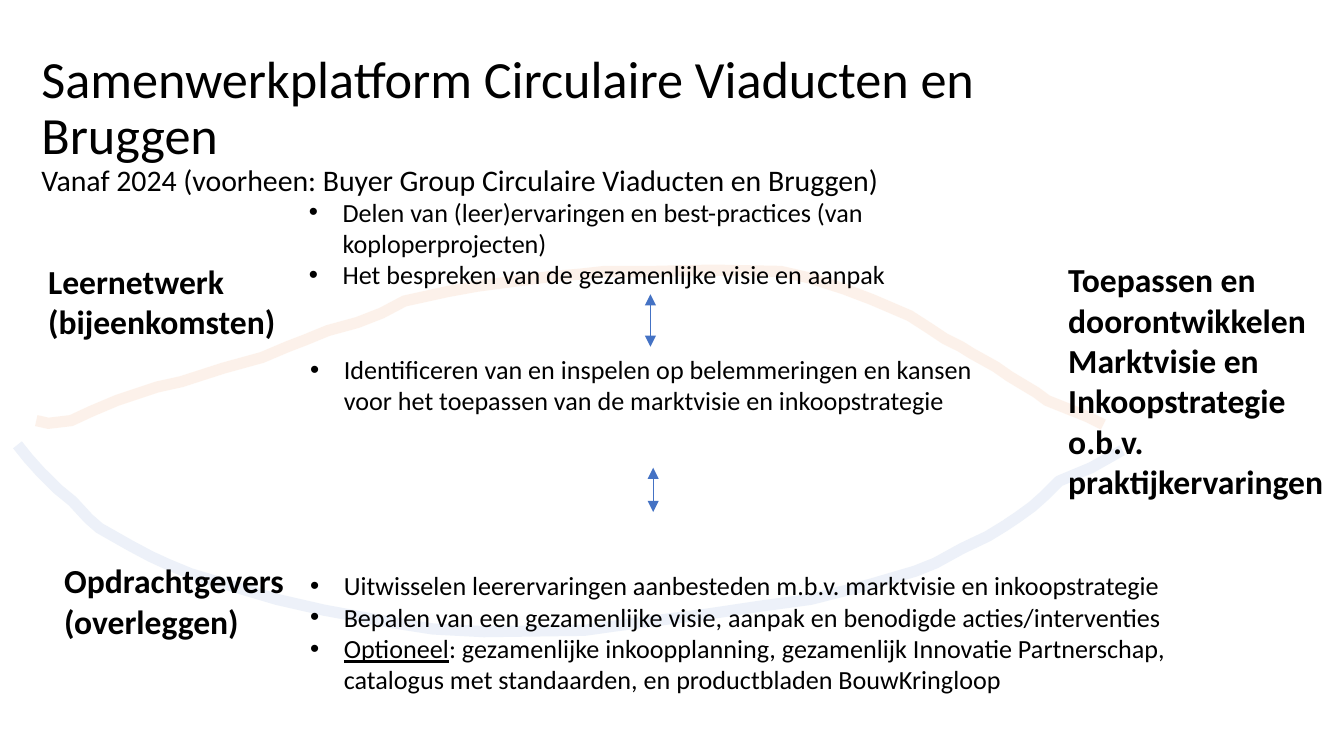
from lxml import etree
from pptx import Presentation
from pptx.dml.color import RGBColor
from pptx.enum.shapes import MSO_CONNECTOR as CONN
from pptx.enum.text import MSO_ANCHOR as ANCHOR, MSO_AUTO_SIZE as AUTO
from pptx.oxml.ns import qn
from pptx.util import Inches, Pt

FONT = "Calibri"
BLACK, BLUE = "000000", "4472C4"

TITLE = [
    ("Samenwerkplatform Circulaire Viaducten en Bruggen", 28),
    ("Vanaf 2024 (voorheen: Buyer Group Circulaire Viaducten en Bruggen)", 16),
]
TITLE_BOX = (0.21, 0.39, 8.5, 1.09)

LABELS = [
    ((0.26, 1.89, 2.26, 0.71), [["Leernetwerk", "(bijeenkomsten)"]]),
    ((7.85, 1.88, 2.14, 1.92),
     [["Toepassen en doorontwikkelen Marktvisie en Inkoopstrategie o.b.v. praktijkervaringen"]]),
    ((0.38, 4.12, 2.26, 0.71), [["Opdrachtgevers"], ["(overleggen)"]]),
]

BULLETS = [
    ((2.2, 1.41, 5.21, 0.98), [
        [("Delen van (leer)ervaringen en best-practices (van koploperprojecten)", False)],
        [("Het bespreken van de gezamenlijke visie en aanpak", False)],
    ]),
    ((2.21, 2.58, 5.2, 0.57), [
        [("Identificeren van en inspelen op belemmeringen en kansen voor het "
          "toepassen van de marktvisie en inkoopstrategie", False)],
    ]),
    ((2.21, 4.19, 7.33, 1.04), [
        [("Uitwisselen leerervaringen aanbesteden m.b.v. marktvisie en inkoopstrategie", False)],
        [("Bepalen van een gezamenlijke visie, aanpak en benodigde acties/interventies", False)],
        [("Optioneel", True),
         (": gezamenlijke inkoopplanning, gezamenlijk Innovatie Partnerschap, "
          "catalogus met standaarden, en productbladen BouwKringloop", False)],
    ]),
]

ARCS = [
    ("FBE5D6", 50, [
        (0.27, 3.13), (0.36, 3.15), (0.53, 3.13), (0.68, 3.06), (0.87, 2.98), (1.02, 2.93),
        (1.17, 2.88), (1.35, 2.84), (1.66, 2.74), (1.95, 2.66), (2.14, 2.58), (2.27, 2.53),
        (2.44, 2.46), (2.66, 2.4), (2.84, 2.33), (3.01, 2.24), (3.33, 2.17), (3.55, 2.13),
        (3.85, 2.09), (4.08, 2.06), (4.32, 2.04), (4.5, 2.02), (4.86, 2.02), (5.3, 2.01),
        (5.81, 2.02), (6.03, 2.07), (6.28, 2.15), (6.49, 2.23), (6.77, 2.35), (6.91, 2.44),
        (7.03, 2.52), (7.15, 2.58), (7.23, 2.63), (7.41, 2.73), (7.51, 2.8), (7.61, 2.86),
        (7.71, 2.92), (7.79, 2.98), (7.94, 3.04), (8.09, 3.1), (8.21, 3.16)]),
    ("DAE3F3", 48, [
        (0.13, 3.31), (0.21, 3.41), (0.3, 3.51), (0.43, 3.64), (0.54, 3.73), (0.66, 3.86),
        (0.74, 3.93), (0.97, 4.06), (1.12, 4.14), (1.25, 4.2), (1.42, 4.27), (1.79, 4.38),
        (2.06, 4.46), (2.41, 4.54), (2.9, 4.63), (3.22, 4.68), (3.6, 4.7), (4.35, 4.69),
        (4.56, 4.66), (4.94, 4.61), (5.26, 4.57), (5.66, 4.51), (6.03, 4.46), (6.19, 4.42),
        (6.47, 4.35), (6.81, 4.25), (6.96, 4.19), (7.16, 4.08), (7.35, 3.99), (7.48, 3.91),
        (7.57, 3.85), (7.68, 3.77), (7.77, 3.69), (7.88, 3.58), (8.12, 3.48), (8.35, 3.35)]),
]

ARROWS = [(4.84, 2.19, 2.58), (4.86, 3.48, 3.81)]


def rgb(color):
    return RGBColor.from_string(color)


def add_run(p, text, size, bold=False, underline=False):
    r = p.add_run()
    r.text = text
    f = r.font
    f.name, f.size, f.bold, f.underline = FONT, Pt(size), bold, underline
    f.color.rgb = rgb(BLACK)


def add_box(s, box):
    tf = s.shapes.add_textbox(*map(Inches, box)).text_frame
    tf.word_wrap = True
    return tf


def next_paragraph(tf, i):
    return tf.add_paragraph() if i else tf.paragraphs[0]


def add_lines(p, lines, bold=False):
    for i, (text, size) in enumerate(lines):
        if i:
            p.add_line_break()
        add_run(p, text, size, bold)


def add_label(s, box, paragraphs):
    tf = add_box(s, box)
    tf.auto_size = AUTO.SHAPE_TO_FIT_TEXT
    for i, lines in enumerate(paragraphs):
        add_lines(next_paragraph(tf, i), [(text, 18) for text in lines], bold=True)


def add_bullets(s, box, items):
    tf = add_box(s, box)
    tf.auto_size = AUTO.SHAPE_TO_FIT_TEXT
    for i, runs in enumerate(items):
        p = next_paragraph(tf, i)
        pPr = p._p.get_or_add_pPr()
        pPr.set("marL", str(Inches(0.25)))
        pPr.set("indent", str(-Inches(0.25)))
        etree.SubElement(pPr, qn("a:buFont")).set("typeface", "Arial")
        etree.SubElement(pPr, qn("a:buChar")).set("char", "•")
        for text, underline in runs:
            add_run(p, text, 14, underline=underline)


def add_arc(s, color, opacity, points):
    (x, y), *rest = points
    fb = s.shapes.build_freeform(round(x * 100), round(y * 100), scale=Inches(0.01))
    fb.add_line_segments([(round(a * 100), round(b * 100)) for a, b in rest], close=False)
    sp = fb.convert_to_shape()
    sp.shadow.inherit = False
    sp.fill.background()
    sp.line.color.rgb = rgb(color)
    sp.line.width = Pt(6)
    clr = sp.line._ln.find(".//" + qn("a:srgbClr"))
    etree.SubElement(clr, qn("a:alpha")).set("val", str(opacity * 1000))


def add_arrow(s, x, top, bottom):
    c = s.shapes.add_connector(CONN.STRAIGHT, *map(Inches, (x, top, x, bottom)))
    c.line.color.rgb = rgb(BLUE)
    c.line.width = Pt(0.5)
    for end in ("a:headEnd", "a:tailEnd"):
        etree.SubElement(c.line._ln, qn(end)).set("type", "triangle")
    etree.SubElement(c._element.spPr, qn("a:effectLst"))


def main():
    prs = Presentation()
    prs.slide_width = Inches(10)
    prs.slide_height = prs.slide_width * 9 // 16
    s = prs.slides.add_slide(prs.slide_layouts[6])

    tf = add_box(s, TITLE_BOX)
    tf.vertical_anchor = ANCHOR.MIDDLE
    tf.paragraphs[0].line_spacing = 0.9
    add_lines(tf.paragraphs[0], TITLE)

    for arc in ARCS:
        add_arc(s, *arc)
    for label in LABELS:
        add_label(s, *label)
    for bullets in BULLETS:
        add_bullets(s, *bullets)
    for arrow in ARROWS:
        add_arrow(s, *arrow)

    prs.save("out.pptx")


if __name__ == "__main__":
    main()
